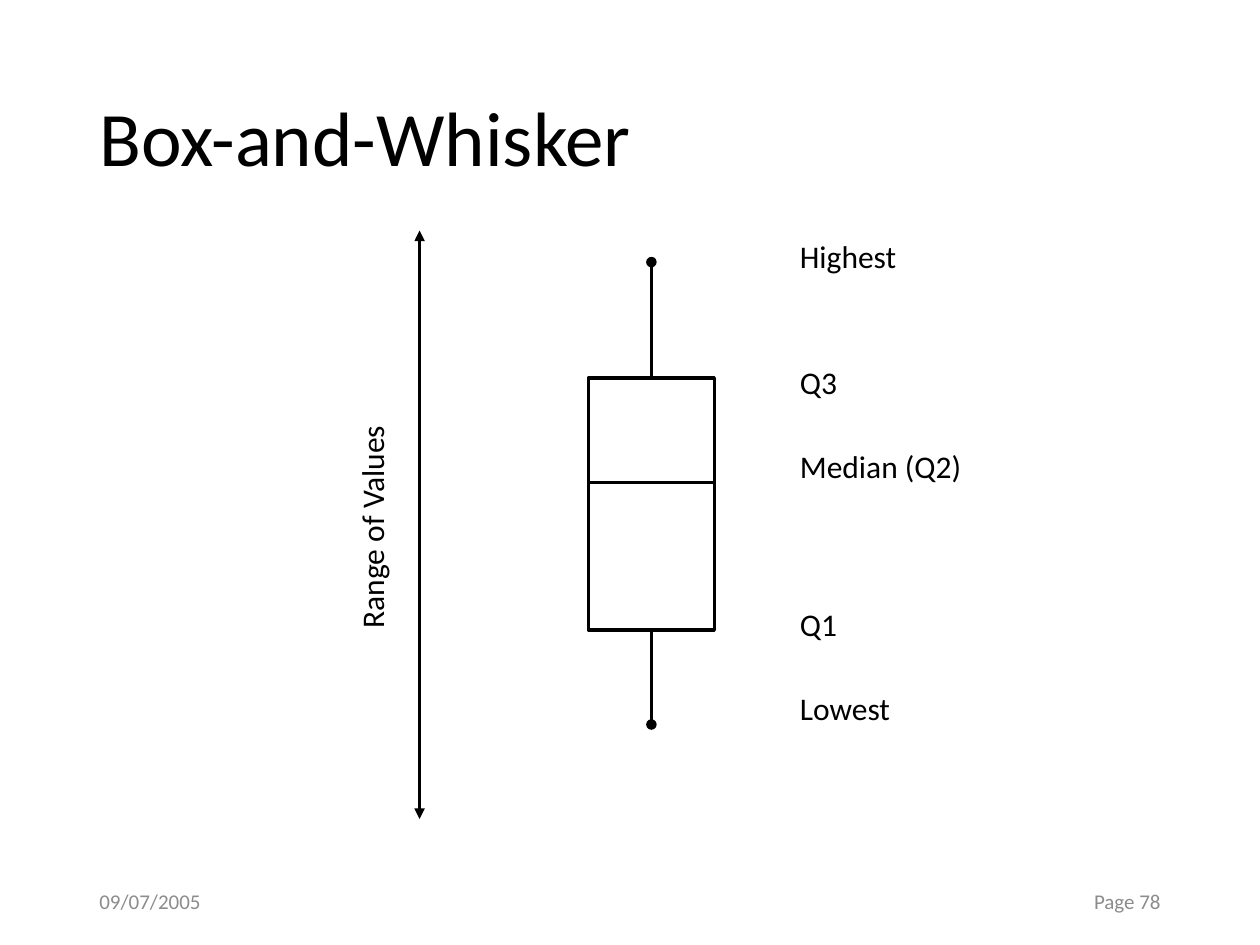
import pptx
import pptx.util
import pptx.dml.color
import pptx.enum.shapes
import pptx.enum.text
import pptx.oxml.ns
import lxml.etree

Inches = pptx.util.Inches
Pt = pptx.util.Pt
ALIGN = pptx.enum.text.PP_ALIGN
ANCHOR = pptx.enum.text.MSO_ANCHOR

BLACK = pptx.dml.color.RGBColor(0x00, 0x00, 0x00)
GRAY = pptx.dml.color.RGBColor(0x8C, 0x8C, 0x8C)
FONT = "Calibri"
LINE_WIDTH = Pt(2)


def write_text(shape, text, size=18, color=BLACK, align=ALIGN.LEFT,
               anchor=ANCHOR.TOP, line_spacing=None):
    frame = shape.text_frame
    frame.word_wrap = True
    frame.vertical_anchor = anchor
    paragraph = frame.paragraphs[0]
    paragraph.alignment = align
    paragraph.line_spacing = line_spacing
    run = paragraph.add_run()
    run.text = text
    run.font.name = FONT
    run.font.size = Pt(size)
    run.font.color.rgb = color


def add_text(slide, box, text, **text_format):
    shape = slide.shapes.add_textbox(*map(Inches, box))
    write_text(shape, text, **text_format)
    return shape


def add_line(slide, start, end, head=None, tail=None):
    """Draw a line; head and tail name the end markers at start and end."""
    line = slide.shapes.add_connector(
        pptx.enum.shapes.MSO_CONNECTOR.STRAIGHT, *map(Inches, start + end))
    line.line.color.rgb = BLACK
    line.line.width = LINE_WIDTH
    outline = line.line._get_or_add_ln()
    for tag, marker in (("a:headEnd", head), ("a:tailEnd", tail)):
        if marker:
            lxml.etree.SubElement(outline, pptx.oxml.ns.qn(tag), type=marker)
    lxml.etree.SubElement(outline.getparent(), pptx.oxml.ns.qn("a:effectLst"))


def place_title(slide, box, text):
    title = slide.shapes.title
    title.left, title.top, title.width, title.height = map(Inches, box)
    write_text(title, text, size=44, anchor=ANCHOR.MIDDLE, line_spacing=0.9)


def add_footer(slide, box, date, page):
    left, top, width, height = box
    part_width = 2.25
    for part_left, text, align in ((left, date, ALIGN.LEFT),
                                   (left + width - part_width, page, ALIGN.RIGHT)):
        add_text(slide, (part_left, top, part_width, height), text, size=12,
                 color=GRAY, align=align, anchor=ANCHOR.MIDDLE)


def add_value_axis(slide, box, text):
    """Draw a two-headed arrow on the box's right edge, its label to the left."""
    left, top, width, height = box
    right = left + width
    add_line(slide, (right, top), (right, top + height),
             head="triangle", tail="triangle")
    label_width, label_height = 2.67, 0.5
    center_x, center_y = right - 0.33, top + 1.92
    label = add_text(slide, (center_x - label_width / 2, center_y - label_height / 2,
                             label_width, label_height), text)
    label.rotation = 270


def add_box_plot(slide, box, q3, median, q1):
    """Span the box with whiskers; quartiles are offsets from its top."""
    left, top, width, height = box
    center = left + width / 2
    quartiles = slide.shapes.add_shape(
        pptx.enum.shapes.MSO_SHAPE.RECTANGLE, Inches(left), Inches(top + q3),
        Inches(width), Inches(q1 - q3))
    quartiles.shadow.inherit = False
    quartiles.fill.background()
    quartiles.line.color.rgb = BLACK
    quartiles.line.width = LINE_WIDTH
    for edge, extreme in ((q1, height), (q3, 0)):
        add_line(slide, (center, top + edge), (center, top + extreme), tail="oval")
    add_line(slide, (left, top + median), (left + width, top + median))


def add_labels(slide, box, labels):
    """Write each label at its offset from the top of the box."""
    left, top, width, _ = box
    for text, offset in labels:
        add_text(slide, (left, top + offset, width, 0.5), text)


def main():
    deck = pptx.Presentation()
    deck.slide_width, deck.slide_height = Inches(10), Inches(7.5)
    slide = deck.slides.add_slide(deck.slide_layouts.get_by_name("Title Only"))
    place_title(slide, (0.69, 0.4, 8.62, 1.45), "Box-and-Whisker")
    add_value_axis(slide, (2.75, 1.83, 0.58, 4.67), "Range of Values")
    add_box_plot(slide, (4.67, 2.08, 1, 3.67), q3=0.92, median=1.75, q1=2.92)
    add_labels(slide, (6.25, 1.83, 2.42, 4.09), (
        ("Highest", 0), ("Q3", 1), ("Median (Q2)", 1.67),
        ("Q1", 2.92), ("Lowest", 3.59)))
    add_footer(slide, (0.69, 6.95, 8.62, 0.4), "09/07/2005", "Page 78")
    deck.save("out.pptx")


if __name__ == "__main__":
    main()
